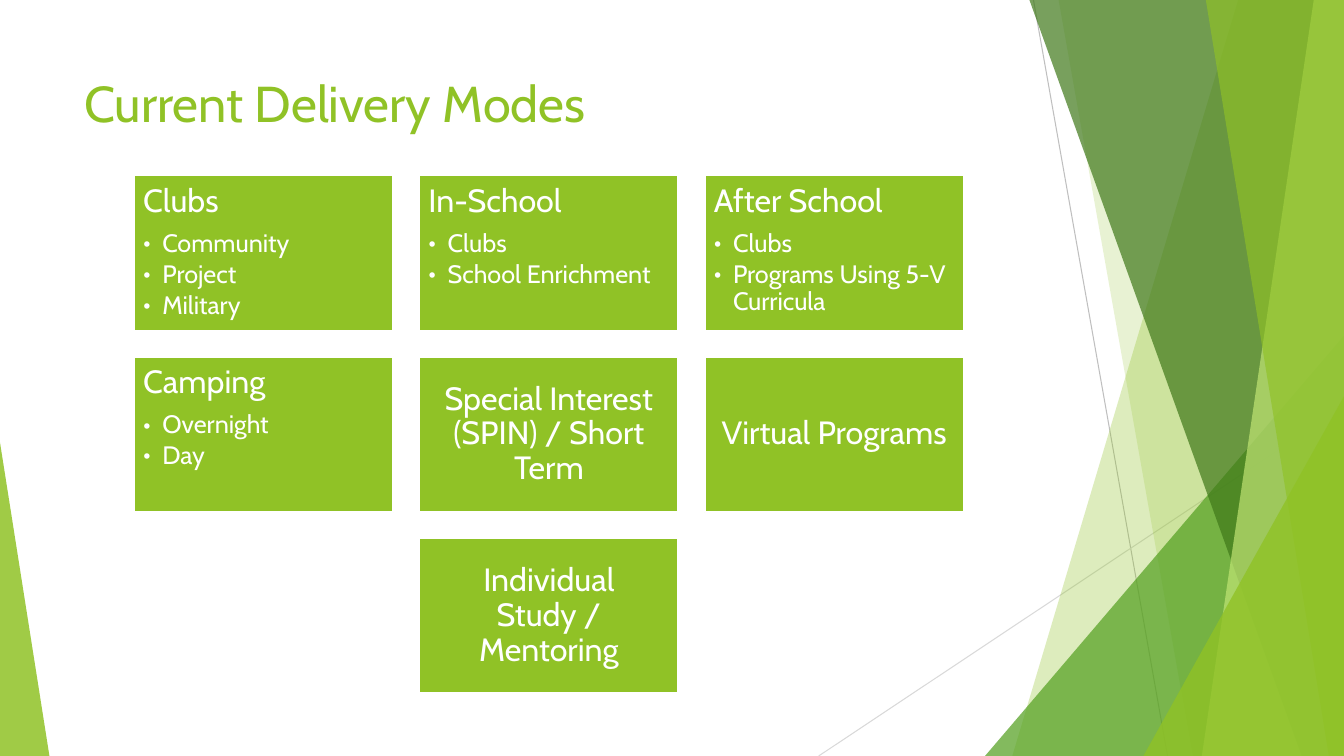
from dataclasses import dataclass

from lxml.etree import SubElement
from pptx import Presentation
from pptx.dml.color import RGBColor
from pptx.enum.shapes import MSO_CONNECTOR, MSO_SHAPE
from pptx.enum.text import MSO_ANCHOR, PP_ALIGN
from pptx.oxml.ns import qn
from pptx.util import Inches, Pt

# Content
TITLE = "Current Delivery Modes"
MODES = [  # column, row, heading, bullets
    (0, 0, "Clubs", ["Community", "Project", "Military"]),
    (1, 0, "In-School", ["Clubs", "School Enrichment"]),
    (2, 0, "After School", ["Clubs", "Programs Using 5-V Curricula"]),
    (0, 1, "Camping", ["Overnight", "Day"]),
    (1, 1, "Special Interest (SPIN) / Short Term", []),
    (2, 1, "Virtual Programs", []),
    (1, 2, "Individual Study / Mentoring", []),
]


# Theme and layout, lengths in inches
@dataclass(frozen=True)
class Theme:
    font: str = "Cabin"
    green: str = "90C226"
    leaf: str = "54A021"
    forest: str = "3F7819"
    lime: str = "C0E474"
    white: str = "FFFFFF"
    dark_line: str = "BFBFBF"
    pale_line: str = "D9D9D9"
    title_size: float = 36
    heading_size: float = 23
    bullet_size: float = 18


THEME = Theme()
WIDTH, HEIGHT = 13.33, 7.5
GRID_LEFT, GRID_TOP = 1.33, 1.74
CARD_WIDTH, CARD_HEIGHT, GAP = 2.57, 1.54, 0.26
PITCH_X, PITCH_Y = CARD_WIDTH + GAP, CARD_HEIGHT + GAP
INSET, BULLET_INDENT = 0.09, 0.19
UNITS_PER_INCH = 100  # freeform points are whole units

# Decoration, from back to front
LINES = [
    ((10.25, 0), (11.58, HEIGHT), THEME.dark_line),
    ((WIDTH, 4.03), (8.12, HEIGHT), THEME.pale_line),
]
BAND, TRIANGLE = "band", "triangle"
FACETS = [  # band: top x, bottom x; triangle: left, top, width, apex share
    (BAND, (12.28, 10.04), THEME.green, 30),
    (BAND, (10.5, 11.83), THEME.green, 20),
    (TRIANGLE, (9.77, 3.33, 3.56, 1), THEME.leaf, 72),
    (BAND, (10.21, 12.91), THEME.forest, 70),
    (BAND, (13.03, 11.92), THEME.lime, 70),
    (BAND, (11.96, 13.18), THEME.green, 65),
    (TRIANGLE, (11.34, 3.93, 1.99, 1), THEME.green, 80),
    (TRIANGLE, (0, 4.39, 0.49, 0), THEME.green, 85),
]


def apply(target, values):
    for name, value in values.items():
        setattr(target, name, value)


def fill_shape(shape, color, opacity=100):
    shape.shadow.inherit = False
    shape.fill.solid()
    shape.fill.fore_color.rgb = RGBColor.from_string(color)
    if opacity < 100:
        color_element = shape._element.spPr.find(qn("a:solidFill"))[0]
        SubElement(color_element, qn("a:alpha"), val=str(opacity * 1000))


def add_line(shapes, start, end, color):
    points = [Inches(value) for value in (*start, *end)]
    connector = shapes.add_connector(MSO_CONNECTOR.STRAIGHT, *points)
    connector.line.color.rgb = RGBColor.from_string(color)
    connector.line.width = Pt(0.75)
    SubElement(connector._element.spPr, qn("a:effectLst"))


def add_facet(shapes, kind, geometry, color, opacity):
    if kind == BAND:
        top_x, bottom_x = geometry
        corners = [(top_x, 0), (WIDTH, 0), (WIDTH, HEIGHT), (bottom_x, HEIGHT)]
        points = [(round(x * UNITS_PER_INCH), round(y * UNITS_PER_INCH)) for x, y in corners]
        builder = shapes.build_freeform(*points[0], scale=Inches(1) / UNITS_PER_INCH)
        builder.add_line_segments(points[1:])
        shape = builder.convert_to_shape()
    else:
        left, top, width, apex = geometry
        box = [Inches(value) for value in (left, top, width, HEIGHT - top)]
        shape = shapes.add_shape(MSO_SHAPE.ISOSCELES_TRIANGLE, *box)
        shape.adjustments[0] = apex
    fill_shape(shape, color, opacity)
    shape.line.fill.background()


def write(paragraph, text, size, color, **layout):
    run = paragraph.add_run()
    run.text = text
    apply(run.font, {"name": THEME.font, "size": Pt(size)})
    run.font.color.rgb = RGBColor.from_string(color)
    apply(paragraph, layout)


def add_bullet(frame, text):
    paragraph = frame.add_paragraph()
    write(paragraph, text, THEME.bullet_size, THEME.white, level=1,
          alignment=PP_ALIGN.LEFT, line_spacing=0.9, space_after=Pt(2.7))
    properties = paragraph._p.get_or_add_pPr()
    properties.set("marL", str(Inches(BULLET_INDENT)))
    properties.set("indent", str(-Inches(BULLET_INDENT)))
    SubElement(properties, qn("a:buFont"), typeface=THEME.font)
    SubElement(properties, qn("a:buChar"), char="•")


def add_card(shapes, column, row, heading, bullets):
    left, top = GRID_LEFT + column * PITCH_X, GRID_TOP + row * PITCH_Y
    box = [Inches(value) for value in (left, top, CARD_WIDTH, CARD_HEIGHT)]
    card = shapes.add_shape(MSO_SHAPE.RECTANGLE, *box)
    fill_shape(card, THEME.green)
    card.line.color.rgb = RGBColor.from_string(THEME.white)
    card.line.width = Pt(1.5)
    frame = card.text_frame
    apply(frame, {f"margin_{side}": Inches(INSET) for side in ("left", "top", "right", "bottom")})
    apply(frame, {"word_wrap": True,
                  "vertical_anchor": MSO_ANCHOR.TOP if bullets else MSO_ANCHOR.MIDDLE})
    write(frame.paragraphs[0], heading, THEME.heading_size, THEME.white,
          alignment=PP_ALIGN.LEFT if bullets else PP_ALIGN.CENTER,
          line_spacing=0.9, space_after=Pt(8 if bullets else 0))
    for text in bullets:
        add_bullet(frame, text)


def main():
    presentation = Presentation()
    apply(presentation, {"slide_width": Inches(WIDTH), "slide_height": Inches(HEIGHT)})
    shapes = presentation.slides.add_slide(presentation.slide_layouts[6]).shapes

    # Background facets
    for line in LINES:
        add_line(shapes, *line)
    for facet in FACETS:
        add_facet(shapes, *facet)

    # Title
    title_box = [Inches(value) for value in (0.74, 0.67, 9.4, 1.44)]
    frame = shapes.add_textbox(*title_box).text_frame
    frame.word_wrap = True
    write(frame.paragraphs[0], TITLE, THEME.title_size, THEME.green)

    # Delivery mode cards
    for mode in MODES:
        add_card(shapes, *mode)

    presentation.save("out.pptx")


if __name__ == "__main__":
    main()
